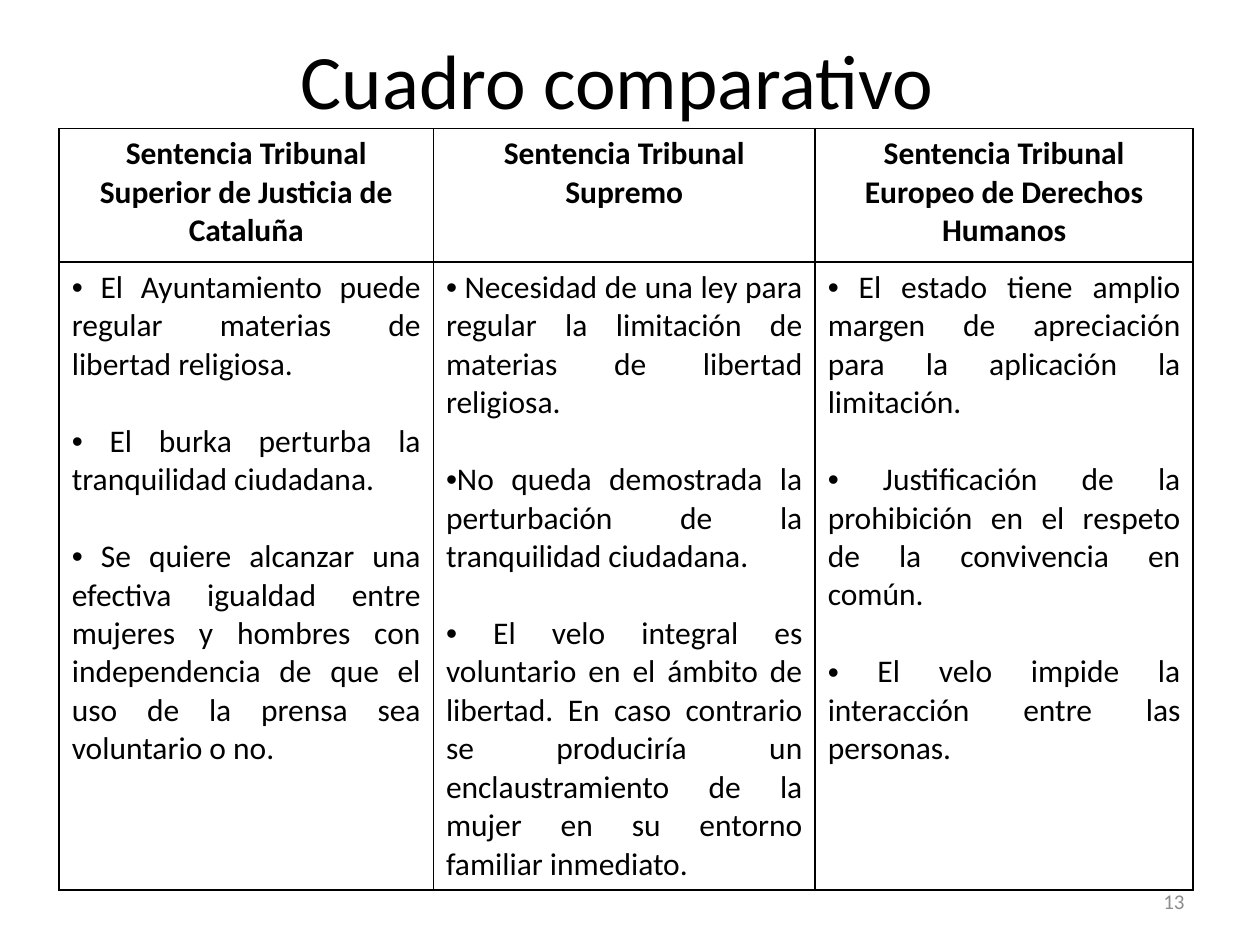
"""Build the slide comparing three court rulings in a table."""
from lxml import etree
from pptx import Presentation
from pptx.dml.color import RGBColor
from pptx.enum.text import MSO_ANCHOR, PP_ALIGN
from pptx.oxml.ns import qn
from pptx.util import Inches, Pt

CENTER, JUSTIFY, RIGHT = PP_ALIGN.CENTER, PP_ALIGN.JUSTIFY, PP_ALIGN.RIGHT
MIDDLE = MSO_ANCHOR.MIDDLE
BLACK = RGBColor(0x00, 0x00, 0x00)
GRAY = RGBColor(0x8C, 0x8C, 0x8C)
FONT = "Calibri"

COLUMNS = [
    (2.97, "Sentencia Tribunal Superior de Justicia de Cataluña", [
        " El Ayuntamiento puede regular materias de libertad religiosa.",
        " El burka perturba la tranquilidad ciudadana.",
        " Se quiere alcanzar una efectiva igualdad entre mujeres y hombres con "
        "independencia de que el uso de la prensa sea voluntario o no.",
    ]),
    (3.03, "Sentencia Tribunal Supremo", [
        " Necesidad de una ley para regular la limitación de materias de "
        "libertad religiosa.",
        "No queda demostrada la perturbación de la tranquilidad ciudadana.",
        " El velo integral es voluntario en el ámbito de libertad. En caso "
        "contrario se produciría un enclaustramiento de la mujer en su entorno "
        "familiar inmediato.",
    ]),
    (3.0, "Sentencia Tribunal Europeo de Derechos Humanos", [
        " El estado tiene amplio margen de apreciación para la aplicación la "
        "limitación.",
        " Justificación de la prohibición en el respeto de la convivencia en común.",
        " El velo impide la interacción entre las personas.",
    ]),
]
ROW_HEIGHTS = [1.06, 4.9]


def format_paragraph(paragraph, size, alignment, color=BLACK, bold=False):
    paragraph.alignment = alignment
    for run in paragraph.runs:
        run.font.name = FONT
        run.font.size = Pt(size)
        run.font.bold = bold
        run.font.color.rgb = color


def add_borders(cell):
    properties = cell._tc.get_or_add_tcPr()
    for index, side in enumerate(("lnL", "lnR", "lnT", "lnB")):
        line = etree.Element(qn(f"a:{side}"), w=str(Pt(1)))
        fill = etree.SubElement(line, qn("a:solidFill"))
        etree.SubElement(fill, qn("a:srgbClr"), val=str(BLACK))
        properties.insert(index, line)


presentation = Presentation()
presentation.slide_width = Inches(10)
presentation.slide_height = Inches(7.5)
slide = presentation.slides.add_slide(presentation.slide_layouts[5])

title = slide.shapes.title
title.left, title.top = Inches(0.47), Inches(0)
title.width, title.height = Inches(9), Inches(1.25)
title.text_frame.text = "Cuadro comparativo "
title.text_frame.vertical_anchor = MIDDLE
format_paragraph(title.text_frame.paragraphs[0], 44, CENTER)

table = slide.shapes.add_table(
    len(ROW_HEIGHTS), len(COLUMNS),
    Inches(0.47), Inches(1.02), Inches(9), Inches(sum(ROW_HEIGHTS)),
).table
table.horz_banding = False
for row, height in zip(table.rows, ROW_HEIGHTS):
    row.height = Inches(height)

for index, (width, heading, points) in enumerate(COLUMNS):
    table.columns[index].width = Inches(width)
    header, body = table.cell(0, index), table.cell(1, index)
    header.text_frame.text = heading
    format_paragraph(header.text_frame.paragraphs[0], 18, CENTER, bold=True)

    body.text_frame.text = "\n".join(points)
    for number, paragraph in enumerate(body.text_frame.paragraphs):
        format_paragraph(paragraph, 18, JUSTIFY)
        if number:
            paragraph.space_before = Pt(22)
        properties = paragraph._p.get_or_add_pPr()
        etree.SubElement(properties, qn("a:buFont"), typeface="Arial")
        etree.SubElement(properties, qn("a:buChar"), char="•")

    for cell in (header, body):
        cell.fill.background()
        add_borders(cell)

page_number = slide.shapes.add_textbox(
    Inches(7.17), Inches(6.95), Inches(2.33), Inches(0.4))
page_number.text_frame.word_wrap = True
page_number.text_frame.vertical_anchor = MIDDLE
page_number.text_frame.text = "13"
format_paragraph(page_number.text_frame.paragraphs[0], 12, RIGHT, GRAY)

presentation.save("out.pptx")
